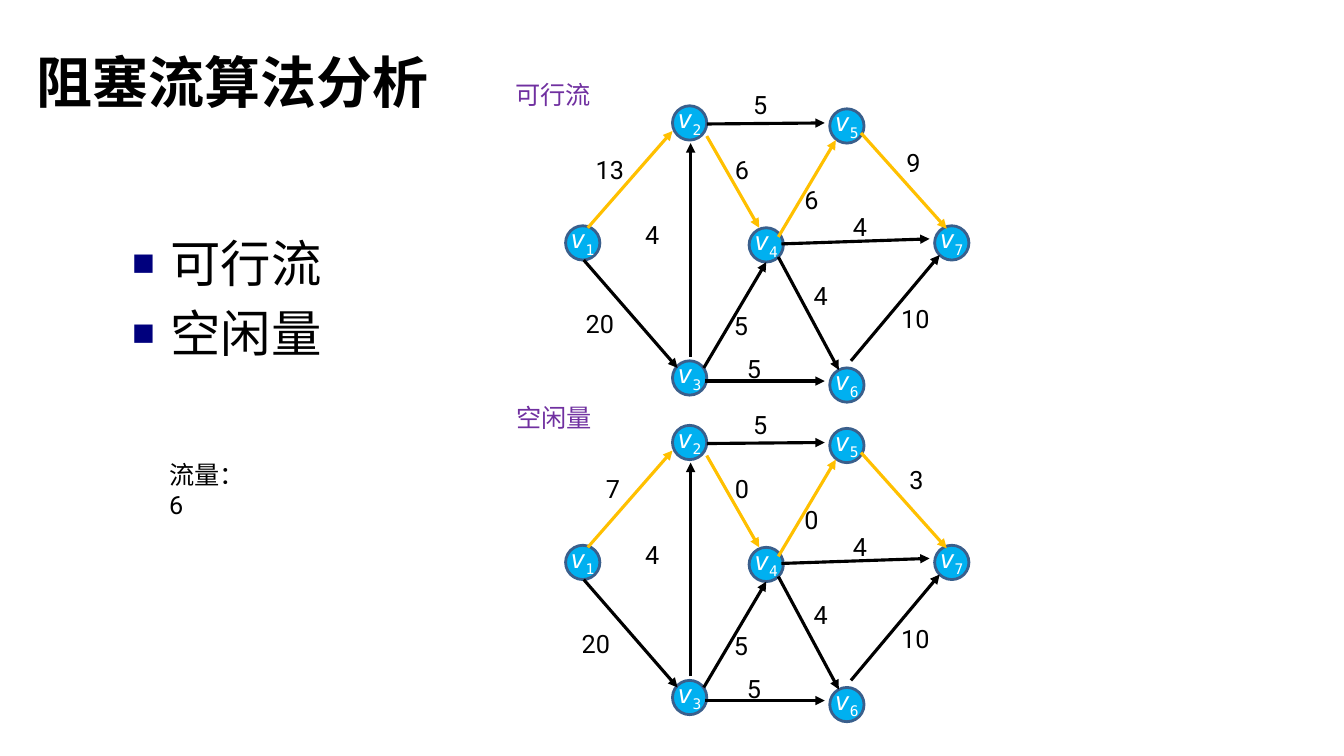
from lxml import etree
from pptx import Presentation
from pptx.dml.color import RGBColor
from pptx.enum.shapes import MSO_CONNECTOR, MSO_SHAPE
from pptx.enum.text import MSO_ANCHOR, MSO_AUTO_SIZE, PP_ALIGN
from pptx.oxml.ns import qn
from pptx.util import Inches, Pt

LINE = MSO_CONNECTOR.STRAIGHT
OVAL = MSO_SHAPE.OVAL
MIDDLE = MSO_ANCHOR.MIDDLE
LEFT = PP_ALIGN.LEFT
FIXED = MSO_AUTO_SIZE.NONE
GROW = MSO_AUTO_SIZE.SHAPE_TO_FIT_TEXT

BLACK, WHITE, GOLD, PURPLE = "000000", "FFFFFF", "FFC000", "7030A0"
SANS, MONO, HAN = "Roboto", "DejaVu Sans Mono", "Noto Sans CJK SC"
DROP = 3.17  # distance from the upper graph to the lower one

# vertex number: left, top of its circle
NODES = {
    1: (5.61, 2.24), 2: (6.67, 1.05), 3: (6.67, 3.58), 4: (7.43, 2.26),
    5: (8.23, 1.08), 6: (8.23, 3.65), 7: (9.27, 2.24),
}
# start x, start y, end x, end y, colour
EDGES = [
    (5.83, 2.26, 6.67, 1.3, GOLD),
    (5.79, 2.58, 6.72, 3.65, BLACK),
    (7.01, 1.35, 7.53, 2.26, GOLD),
    (7.01, 1.23, 8.18, 1.22, BLACK),
    (6.85, 3.54, 6.85, 1.42, BLACK),
    (6.98, 3.65, 7.6, 2.6, BLACK),
    (6.99, 3.78, 8.18, 3.78, BLACK),
    (7.72, 2.55, 8.32, 3.67, BLACK),
    (8.44, 3.58, 9.32, 2.53, BLACK),
    (7.75, 2.42, 9.22, 2.37, BLACK),
    (7.72, 2.35, 8.29, 1.39, GOLD),
    (8.54, 1.32, 9.39, 2.27, GOLD),
]
# left, top, upper value, lower value
LABELS = [
    (6.3, 2.13, "4", "4"), (7.37, 0.84, "5", "5"),
    (7.19, 1.48, "6", "0"), (7.88, 1.78, "6", "0"),
    (7.18, 3.03, "5", "5"), (7.31, 3.46, "5", "5"),
    (7.97, 2.73, "4", "4"), (8.36, 2.05, "4", "4"),
    (8.84, 2.96, "10", "10"),
]
# labels placed apart in each graph: left, top, value
EXTRA = [
    [(5.81, 1.48, "13"), (5.71, 3.01, "20"), (8.89, 1.41, "9")],
    [(5.91, 1.48, "7"), (5.67, 3.01, "20"), (8.92, 1.39, "3")],
]


def color(code):
    return RGBColor.from_string(code)


class Board:
    def __init__(self, slide):
        self.slide = slide
        self.shapes = slide.shapes

    def font(self, run, size, name, code):
        run.font.size = Pt(size)
        run.font.name = name
        run.font.color.rgb = color(code)

    def place(self, shape, x, y, w, h):
        shape.left, shape.top = Inches(x), Inches(y)
        shape.width, shape.height = Inches(w), Inches(h)

    def title(self, text):
        shape = self.shapes.title
        self.place(shape, 0.26, 0.2, 6.52, 1.21)
        frame = shape.text_frame
        frame.text = text
        frame.auto_size = FIXED
        frame.vertical_anchor = MIDDLE
        para = frame.paragraphs[0]
        para.alignment = LEFT
        self.font(para.runs[0], 40, "Arial", BLACK)
        para.runs[0].font.bold = True

    def bullets(self, items):
        shape = self.slide.placeholders[1]
        self.place(shape, 1.21, 2.25, 2.35, 1.84)
        frame = shape.text_frame
        frame.text = "\n".join(items)
        frame.auto_size = FIXED
        for i, para in enumerate(frame.paragraphs):
            props = para._p.get_or_add_pPr()
            props.set("marL", str(Inches(0.38)))
            props.set("indent", str(-Inches(0.38)))
            tint = etree.SubElement(props, qn("a:buClr"))
            etree.SubElement(tint, qn("a:srgbClr"), val="00007D")
            etree.SubElement(props, qn("a:buSzPct"), val="75000")
            etree.SubElement(props, qn("a:buChar"), char="■")
            para.space_before = Pt(7.2 if i else 0)
            self.font(para.runs[0], 36, HAN, BLACK)

    def text(self, text, x, y, w=0.79, code=BLACK, name=SANS):
        box = self.shapes.add_textbox(Inches(x), Inches(y), Inches(w), Inches(0.4))
        frame = box.text_frame
        frame.word_wrap = True
        frame.auto_size = GROW
        frame.text = text
        para = frame.paragraphs[0]
        self.font(para.runs[0], 18, name, code)
        return para

    def node(self, num, x, y):
        dot = self.shapes.add_shape(OVAL, Inches(x), Inches(y), Inches(0.34), Inches(0.34))
        dot.shadow.inherit = False
        dot.fill.solid()
        dot.fill.fore_color.rgb = color("00B0F0")
        dot.line.color.rgb = color("3A5F8C")
        dot.line.width = Pt(2)
        para = self.text("v", x - 0.05, y - 0.07, 0.52, WHITE, MONO)
        para.runs[0].font.italic = True
        sub = para.add_run()
        sub.text = str(num)
        self.font(sub, 18, MONO, WHITE)
        sub.font._element.set("baseline", "-25000")

    def arrow(self, x1, y1, x2, y2, code):
        edge = self.shapes.add_connector(LINE, Inches(x1), Inches(y1), Inches(x2), Inches(y2))
        edge.line.color.rgb = color(code)
        edge.line.width = Pt(2.25)
        etree.SubElement(edge.line._get_or_add_ln(), qn("a:tailEnd"), type="triangle")
        etree.SubElement(edge._element.spPr, qn("a:effectLst"))

    def graph(self, row):
        down = row * DROP
        for num, (x, y) in NODES.items():
            self.node(num, x, y + down)
        for x1, y1, x2, y2, code in EDGES:
            self.arrow(x1, y1 + down, x2, y2 + down, code)
        for x, y, *values in LABELS:
            self.text(values[row], x, y + down)
        for x, y, value in EXTRA[row]:
            self.text(value, x, y + down)


def main():
    deck = Presentation()
    deck.slide_width, deck.slide_height = Inches(13.33), Inches(7.5)
    board = Board(deck.slides.add_slide(deck.slide_layouts[1]))
    board.title("阻塞流算法分析")
    board.bullets(["可行流", "空闲量"])
    for row in range(2):
        board.graph(row)
    board.text("可行流", 5.01, 0.74, 1.55, PURPLE)
    board.text("空闲量", 5.02, 3.94, 1.45, PURPLE)
    board.text("流量：6", 1.58, 4.51, 1.08)
    deck.save("out.pptx")


if __name__ == "__main__":
    main()
